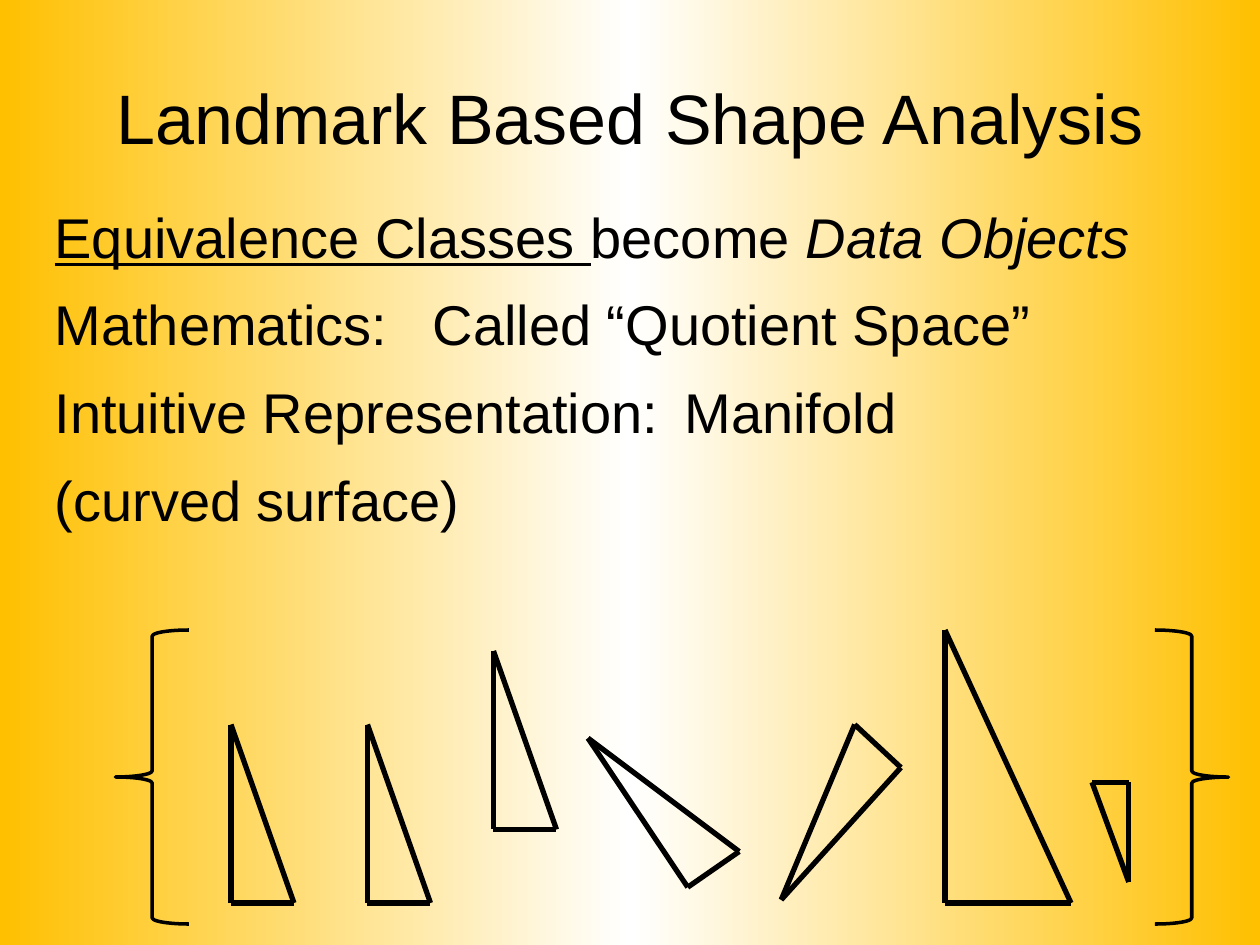
from dataclasses import dataclass
from itertools import combinations
from lxml.etree import SubElement
from pptx import Presentation
from pptx.dml.color import RGBColor
from pptx.enum.shapes import MSO_CONNECTOR, MSO_SHAPE
from pptx.enum.text import MSO_ANCHOR, MSO_AUTO_SIZE, PP_ALIGN
from pptx.oxml.ns import qn
from pptx.util import Inches, Pt

WIDTH, HEIGHT = Inches(10), Inches(7.5)
COLS, ROWS = 120, 90
BLACK, GOLD, WHITE = "000000", "FFC000", "FFFFFF"
FONT = "Arial"


@dataclass(frozen=True)
class Point:
    col: float
    row: float


@dataclass(frozen=True)
class Triangle:
    apex: Point
    corner: Point
    end: Point


@dataclass(frozen=True)
class Brace:
    col: float
    rotation: int


@dataclass(frozen=True)
class Phrase:
    text: str
    underline: bool = False
    italic: bool = False


@dataclass(frozen=True)
class Line:
    phrases: tuple[Phrase, ...]
    tab: float = 0


def upright(col: float, top: float, width: float, height: float) -> Triangle:
    bottom = top + height
    return Triangle(Point(col, top), Point(col, bottom), Point(col + width, bottom))


TRIANGLES = (
    upright(22, 69, 6, 17),
    upright(35, 69, 6, 17),
    upright(47, 62, 6, 17),
    Triangle(Point(56, 70.3), Point(65.5, 84.5), Point(70.4, 81.1)),
    Triangle(Point(74.4, 85.7), Point(85.8, 73.1), Point(81.4, 69)),
    upright(90, 60, 12, 26),
    Triangle(Point(107.5, 84), Point(107.5, 74.5), Point(104, 74.5)),
)
BRACES = (Brace(11, 0), Brace(110, 180))
LINES = (
    Line((
        Phrase("Equivalence Classes ", underline=True),
        Phrase("become "),
        Phrase("Data Objects", italic=True),
    )),
    Line((Phrase("Mathematics:\tCalled “Quotient Space”"),), tab=3.12),
    Line((Phrase("Intuitive Representation:\tManifold"),), tab=5.38),
    Line((Phrase("(curved surface)"),)),
)


def color(value: str) -> RGBColor:
    return RGBColor.from_string(value)


def x(col: float) -> int:
    return round(WIDTH * col / COLS)


def y(row: float) -> int:
    return round(HEIGHT * row / ROWS)


def place(sp, col: float, row: float, width: float, height: float) -> None:
    sp.left, sp.top, sp.width, sp.height = x(col), y(row), x(width), y(height)


def format_font(font, size: float) -> None:
    font.name, font.size = FONT, Pt(size)
    font.color.rgb = color(BLACK)


def paint_background(s) -> None:
    fill = s.background.fill
    fill.gradient()
    fill.gradient_angle = 0
    stops = next(s.element.iter(qn("a:gsLst")))
    stops.clear()
    for share, value in ((0, GOLD), (50, WHITE), (100, GOLD)):
        stop = SubElement(stops, qn("a:gs"), pos=str(share * 1000))
        SubElement(stop, qn("a:srgbClr"), val=value)


def write_title(sp, text: str) -> None:
    place(sp, 6, 3.6, 108, 15)
    tf = sp.text_frame
    tf.text = text
    tf.vertical_anchor = MSO_ANCHOR.MIDDLE
    p = tf.paragraphs[0]
    p.alignment = PP_ALIGN.CENTER
    format_font(p.runs[0].font, 40)


def write_line(p, line: Line) -> None:
    p.line_spacing = 1.1
    p.space_before = Pt(8)
    pPr = p._p.get_or_add_pPr()
    pPr.set("marL", "0")
    pPr.set("indent", "0")
    SubElement(pPr, qn("a:buNone"))
    if line.tab:
        tabs = SubElement(pPr, qn("a:tabLst"))
        SubElement(tabs, qn("a:tab"), pos=str(Inches(line.tab)), algn="l")
    for phrase in line.phrases:
        r = p.add_run()
        r.text = phrase.text
        format_font(r.font, 32)
        r.font.underline, r.font.italic = phrase.underline, phrase.italic


def write_body(sp, lines: tuple[Line, ...]) -> None:
    place(sp, 4, 18, 110.5, 68)
    tf = sp.text_frame
    tf.auto_size = MSO_AUTO_SIZE.NONE
    tf.vertical_anchor = MSO_ANCHOR.TOP
    for i, line in enumerate(lines):
        write_line(tf.add_paragraph() if i else tf.paragraphs[0], line)


def draw_triangle(s, triangle: Triangle) -> None:
    group = s.shapes.add_group_shape()
    points = (triangle.apex, triangle.corner, triangle.end)
    for a, b in combinations(points, 2):
        side = group.shapes.add_connector(
            MSO_CONNECTOR.STRAIGHT, x(a.col), y(a.row), x(b.col), y(b.row))
        side.line.color.rgb = color(BLACK)
        side.line.width = Pt(3)
        SubElement(side._element.spPr, qn("a:effectLst"))


def draw_brace(s, brace: Brace) -> None:
    sp = s.shapes.add_shape(MSO_SHAPE.LEFT_BRACE, x(brace.col), y(60), x(7), y(28))
    sp.rotation = brace.rotation
    sp.shadow.inherit = False
    sp.fill.background()
    sp.line.color.rgb = color(BLACK)
    sp.line.width = Pt(2)


def main() -> None:
    prs = Presentation()
    prs.slide_width, prs.slide_height = WIDTH, HEIGHT
    s = prs.slides.add_slide(prs.slide_layouts[1])
    paint_background(s)
    write_title(s.shapes.title, "Landmark Based Shape Analysis")
    write_body(s.placeholders[1], LINES)
    for triangle in TRIANGLES:
        draw_triangle(s, triangle)
    for brace in BRACES:
        draw_brace(s, brace)
    prs.save("out.pptx")


if __name__ == "__main__":
    main()
